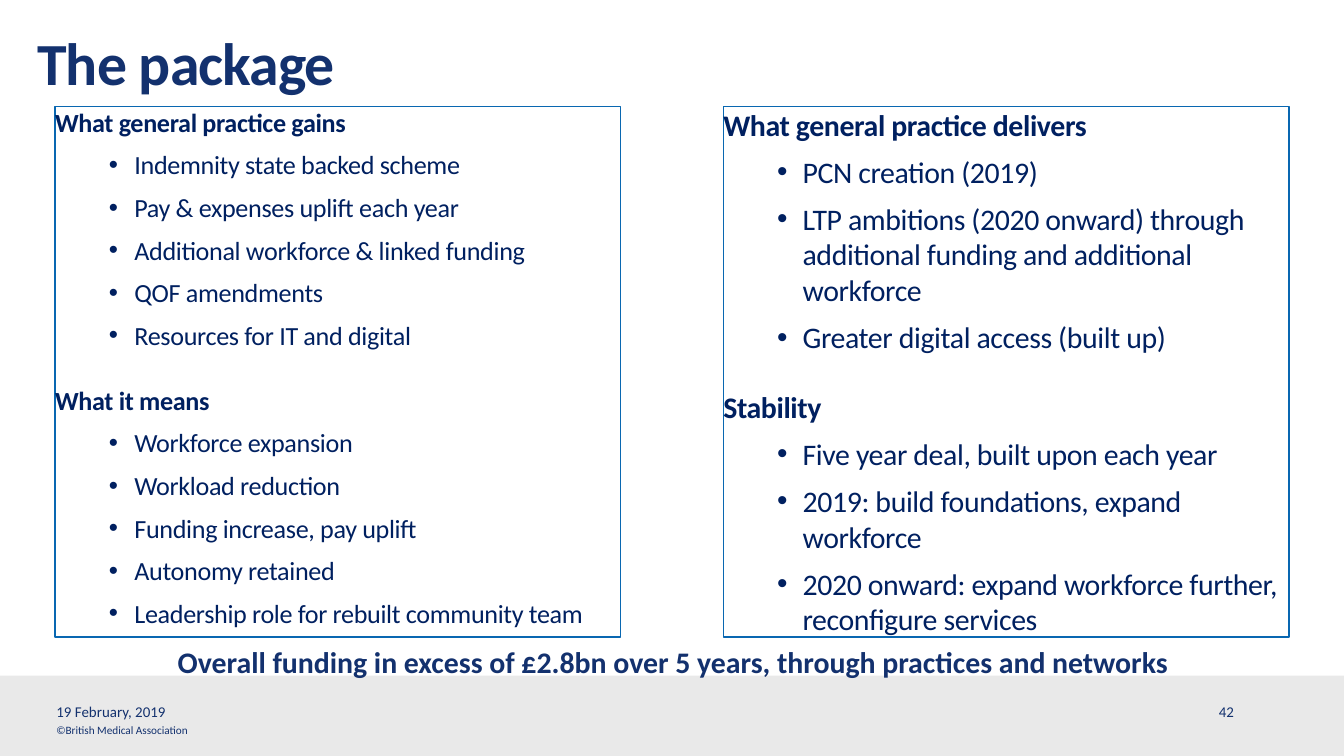
import pptx
import pptx.util
import pptx.dml.color
import pptx.enum.shapes
import pptx.enum.text
from lxml import etree

Pt = pptx.util.Pt
ALIGN = pptx.enum.text.PP_ALIGN
ANCHOR = pptx.enum.text.MSO_ANCHOR
RECT = pptx.enum.shapes.MSO_SHAPE.RECTANGLE

# Content
TITLE = "The package"
PANELS = [
    (14, [
        ("What general practice gains", [
            "Indemnity state backed scheme",
            "Pay & expenses uplift each year",
            "Additional workforce & linked funding",
            "QOF amendments",
            "Resources for IT and digital"]),
        ("What it means", [
            "Workforce expansion",
            "Workload reduction",
            "Funding increase, pay uplift",
            "Autonomy retained",
            "Leadership role for rebuilt community team"]),
    ]),
    (16, [
        ("What general practice delivers", [
            "PCN creation (2019)",
            "LTP ambitions (2020 onward) through additional funding and additional workforce",
            "Greater digital access (built up)"]),
        ("Stability", [
            "Five year deal, built upon each year",
            "2019: build foundations, expand workforce",
            "2020 onward: expand workforce further, reconfigure services"]),
    ]),
]
SUMMARY = "Overall funding in excess of £2.8bn over 5 years, through practices and networks"
# text, left, top, width, height, size
FOOTER = [
    ("19 February, 2019", 30.2, 376.6, 228, 9.4, 8),
    ("42", 653, 376.6, 20, 9.4, 8),
    ("©British Medical Association", 30.2, 387.4, 149, 7.2, 6),
]

# Style and layout
FONT, NAVY, INK, BLUE, GREY = "Calibri", "13316E", "002060", "0967B1", "E9E9E9"
PANEL_LEFT, PANEL_TOP, PANEL_W, PANEL_H, PANEL_STEP = 29.5, 56.9, 303, 284.4, 358
INDENT, HANG = 42.5, 13.7


def rgb(value):
    return pptx.dml.color.RGBColor.from_string(value)


def frame(shape, anchor=ANCHOR.TOP, inset=0):
    tf = shape.text_frame
    tf.word_wrap = True
    tf.auto_size = pptx.enum.text.MSO_AUTO_SIZE.NONE
    tf.vertical_anchor = anchor
    tf.margin_left = tf.margin_right = Pt(2 * inset)
    tf.margin_top = tf.margin_bottom = Pt(inset)
    return tf


def add_run(p, text, size, color, bold=False, spacing=0):
    r = p.add_run()
    r.text = text
    r.font.name, r.font.size, r.font.bold = FONT, Pt(size), bold
    r.font.color.rgb = rgb(color)
    if spacing:
        r._r.get_or_add_rPr().set("spc", str(round(spacing * 100)))


def add_bullet(p):
    pPr = p._p.get_or_add_pPr()
    pPr.set("marL", str(Pt(INDENT)))
    pPr.set("indent", str(-Pt(HANG)))
    ns = pptx.oxml.ns.qn
    etree.SubElement(pPr, ns("a:buFont")).set("typeface", "Arial")
    etree.SubElement(pPr, ns("a:buChar")).set("char", "•")


def add_rect(s, left, top, width, height):
    sp = s.shapes.add_shape(RECT, Pt(left), Pt(top), Pt(width), Pt(height))
    sp.shadow.inherit = False
    return sp


def add_panel(s, left, size, sections):
    sp = add_rect(s, left, PANEL_TOP, PANEL_W, PANEL_H)
    sp.fill.background()
    sp.line.color.rgb = rgb(BLUE)
    sp.line.width = Pt(0.75)
    tf = frame(sp)
    p = tf.paragraphs[0]
    for i, (heading, items) in enumerate(sections):
        if i:
            p = tf.add_paragraph()
            p.space_before = Pt(12)
        p.alignment, p.space_after = ALIGN.LEFT, Pt(6)
        add_run(p, heading, size, INK, True, -0.2)
        for item in items:
            p = tf.add_paragraph()
            p.alignment, p.space_after = ALIGN.LEFT, Pt(6)
            add_bullet(p)
            add_run(p, item, size, INK, False, -0.2)


def add_text(s, text, left, top, width, height, size, bold=False,
             align=ALIGN.LEFT, anchor=ANCHOR.MIDDLE, inset=0):
    sp = s.shapes.add_textbox(Pt(left), Pt(top), Pt(width), Pt(height))
    p = frame(sp, anchor, inset).paragraphs[0]
    p.alignment = align
    add_run(p, text, size, NAVY, bold)


prs = pptx.Presentation()
prs.slide_width, prs.slide_height = Pt(720), Pt(405)
s = prs.slides.add_slide(prs.slide_layouts[5])

# Footer band
band = add_rect(s, 0, 362, 720, 43)
band.fill.solid()
band.fill.fore_color.rgb = rgb(GREY)
band.line.fill.background()

# Title
title = s.shapes.title
title.left, title.top, title.width, title.height = Pt(20), Pt(18), Pt(556.6), Pt(39)
p = frame(title).paragraphs[0]
p.alignment, p.line_spacing = ALIGN.LEFT, Pt(34)
add_run(p, TITLE, 32, NAVY, True, -0.5)

# Panels
for i, (size, sections) in enumerate(PANELS):
    add_panel(s, PANEL_LEFT + i * PANEL_STEP, size, sections)

# Summary and footer texts
add_text(s, SUMMARY, 30.2, 341.3, 661, 26.6, 16, True, ALIGN.CENTER, ANCHOR.TOP, 3.6)
for item in FOOTER:
    add_text(s, *item)

prs.save("out.pptx")
